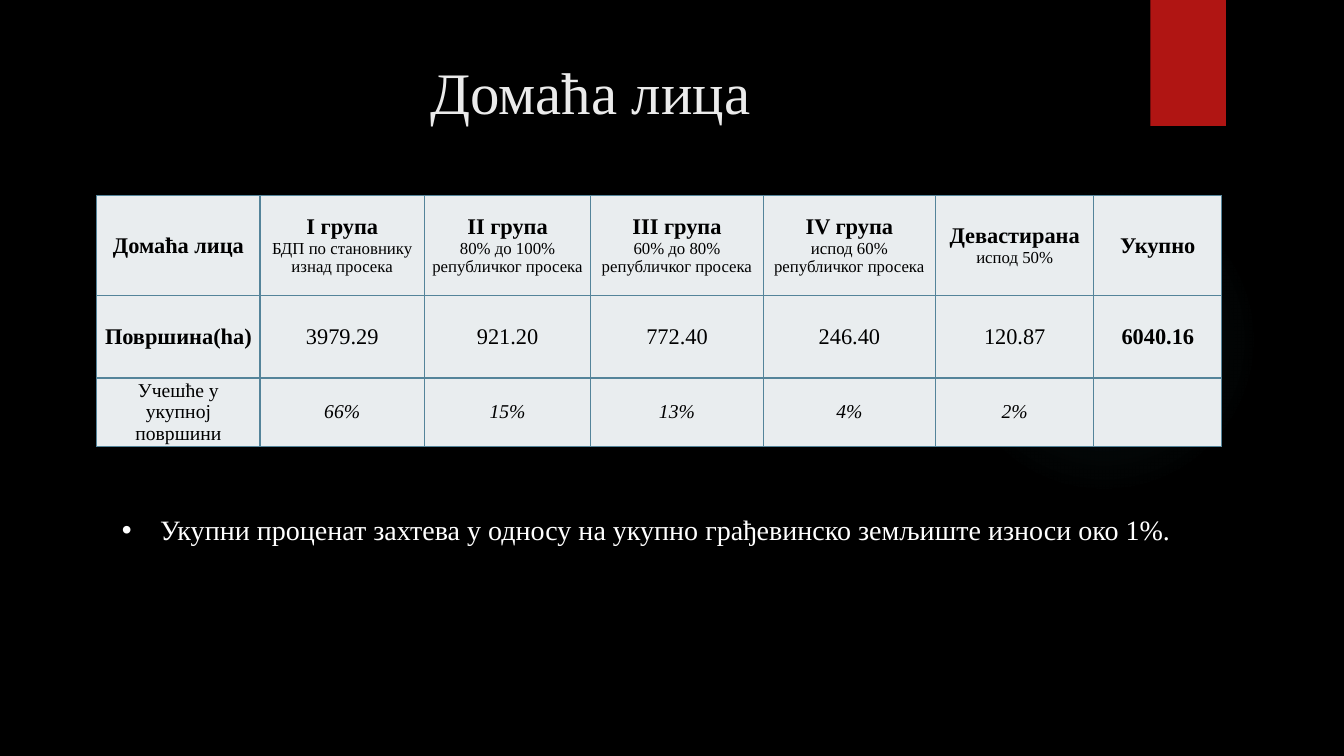
from lxml import etree
from pptx import Presentation
from pptx.dml.color import RGBColor
from pptx.enum.shapes import MSO_SHAPE
from pptx.enum.text import MSO_ANCHOR, PP_ALIGN
from pptx.oxml import parse_xml
from pptx.oxml.ns import qn
from pptx.util import Inches, Pt

RECT, OVAL = MSO_SHAPE.RECTANGLE, MSO_SHAPE.OVAL
TOP, MIDDLE = MSO_ANCHOR.TOP, MSO_ANCHOR.MIDDLE
LEFT, CENTER = PP_ALIGN.LEFT, PP_ALIGN.CENTER
FONT = "Times New Roman"
NS = 'xmlns:a="http://schemas.openxmlformats.org/drawingml/2006/main"'
BLACK, WHITE, RED, TEAL = "000000", "FFFFFF", "B01513", "50B9C1"
PALE, EDGE, TITLE = "E9EDEF", "54849A", "EBEBEB"

COLS = [1.62, 1.63, 1.65, 1.71, 1.71, 1.57, 1.27]
ROWS = [0.99, 0.82, 0.68]
HEADS = [
    ("Домаћа лица", ""),
    ("I група", "БДП по становнику изнад просека"),
    ("II група", "80% до 100% републичког просека"),
    ("III група", "60% до 80% републичког просека"),
    ("IV група", "испод 60% републичког просека"),
    ("Девастирана", "испод 50%"),
    ("Укупно", ""),
]
AREAS = ["Површина(ha)", "3979.29", "921.20", "772.40", "246.40", "120.87", "6040.16"]
SHARES = ["Учешће у укупној површини", "66%", "15%", "13%", "4%", "2%", ""]


def color(code):
    return RGBColor.from_string(code)


def write(para, text, size=16, tint=BLACK, bold=False, italic=False, align=CENTER):
    para.alignment = align
    run = para.add_run()
    run.text = text
    font = run.font
    font.name, font.size, font.bold, font.italic = FONT, Pt(size), bold, italic
    font.color.rgb = color(tint)


def add_shape(slide, kind, box, fill):
    shape = slide.shapes.add_shape(kind, *map(Inches, box))
    shape.shadow.inherit = False
    shape.line.fill.background()
    shape.fill.solid()
    shape.fill.fore_color.rgb = color(fill)
    return shape


def add_glow(slide, box, tint, stops):
    """Add a circle that fades outward; stops are (place, opacity) percents."""
    props = add_shape(slide, OVAL, box, tint).element.spPr
    marks = "".join(
        f'<a:gs pos="{place * 1000}"><a:srgbClr val="{tint}">'
        f'<a:alpha val="{alpha * 1000}"/></a:srgbClr></a:gs>'
        for place, alpha in stops)
    fade = parse_xml(
        f'<a:gradFill {NS}><a:gsLst>{marks}</a:gsLst><a:path path="circle">'
        '<a:fillToRect l="50000" t="50000" r="50000" b="50000"/></a:path></a:gradFill>')
    props.replace(props.find(qn("a:solidFill")), fade)


def set_title(slide, text, box):
    title = slide.shapes.title
    title.left, title.top, title.width, title.height = map(Inches, box)
    title.text_frame.vertical_anchor = TOP
    write(title.text_frame.paragraphs[0], text, size=42, tint=TITLE)


def style_cell(cell):
    cell.vertical_anchor = MIDDLE
    cell.margin_left = cell.margin_right = Inches(0.07)
    cell.margin_top = cell.margin_bottom = 0
    props = cell._tc.get_or_add_tcPr()
    for side in "LRTB":
        props.append(parse_xml(
            f'<a:ln{side} {NS} w="{Pt(1)}"><a:solidFill>'
            f'<a:srgbClr val="{EDGE}"/></a:solidFill></a:ln{side}>'))
    cell.fill.solid()
    cell.fill.fore_color.rgb = color(PALE)


def add_table(slide, left, top):
    table = slide.shapes.add_table(
        len(ROWS), len(COLS), Inches(left), Inches(top),
        Inches(sum(COLS)), Inches(sum(ROWS))).table
    for col, width in zip(table.columns, COLS):
        col.width = Inches(width)
    for row, height in zip(table.rows, ROWS):
        row.height = Inches(height)
    for cell in table.iter_cells():
        style_cell(cell)

    last = len(COLS) - 1
    for i, (head, note) in enumerate(HEADS):
        frame = table.cell(0, i).text_frame
        write(frame.paragraphs[0], head, bold=True)
        if note:
            write(frame.add_paragraph(), note, size=12)
        area = table.cell(1, i).text_frame.paragraphs[0]
        write(area, AREAS[i], bold=i in (0, last))
        if SHARES[i]:
            share = table.cell(2, i).text_frame.paragraphs[0]
            write(share, SHARES[i], size=14, italic=i > 0)


def add_bullet(slide, text, box):
    frame = slide.shapes.add_textbox(*map(Inches, box)).text_frame
    frame.word_wrap = False
    para = frame.paragraphs[0]
    props = para._p.get_or_add_pPr()
    props.set("marL", str(Inches(0.38)))
    props.set("indent", str(Inches(-0.38)))
    etree.SubElement(props, qn("a:buFont")).set("typeface", "Arial")
    etree.SubElement(props, qn("a:buChar")).set("char", "•")
    write(para, text, size=20, tint=WHITE, align=LEFT)


def main():
    deck = Presentation()
    deck.slide_width, deck.slide_height = Inches(13.33), Inches(7.5)
    slide = deck.slides.add_slide(deck.slide_layouts[5])
    back = slide.background.fill
    back.solid()
    back.fore_color.rgb = color(BLACK)

    add_glow(slide, (9.41, 1.83, 3.08, 3.08), TEAL, [(0, 7), (36, 6), (69, 0)])
    add_shape(slide, RECT, (11.41, 0, 0.75, 1.25), RED)
    set_title(slide, "Домаћа лица", (0.71, 0.5, 10.29, 1.53))
    add_table(slide, 0.96, 1.94)
    add_bullet(
        slide,
        "Укупни проценат захтева у односу на укупно грађевинско земљиште износи око 1%.",
        (1.11, 5.04, 10.83, 0.44))
    deck.save("out.pptx")


if __name__ == "__main__":
    main()
